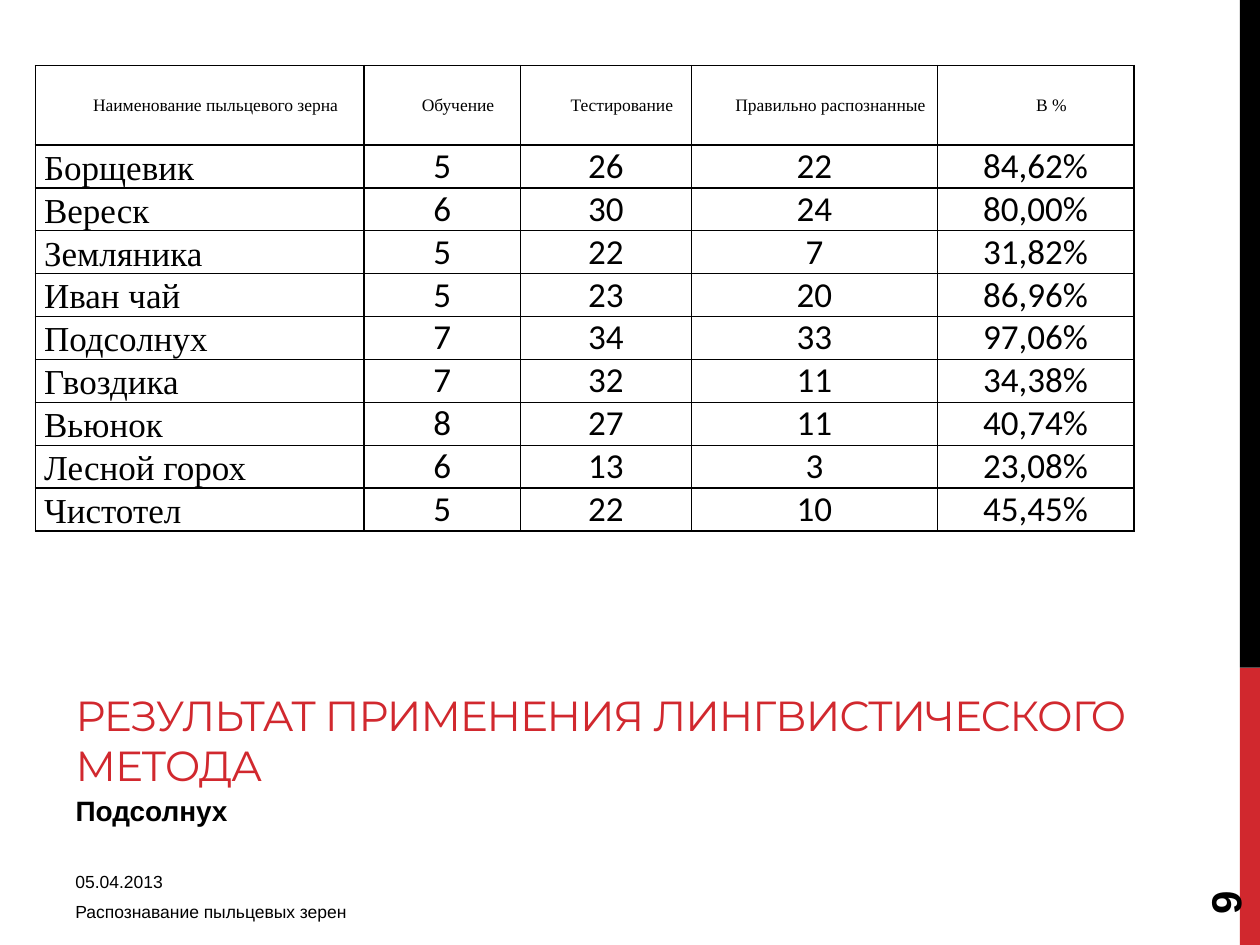
from dataclasses import dataclass
from pptx import Presentation
from pptx.dml.color import RGBColor as RGB
from pptx.enum.shapes import MSO_SHAPE as SHAPE
from pptx.enum.text import MSO_ANCHOR as ANCHOR, MSO_AUTO_SIZE as AUTO, PP_ALIGN as ALIGN
from pptx.oxml import parse_xml
from pptx.oxml.ns import nsdecls
from pptx.util import Inches, Pt


@dataclass
class Theme:
    red: RGB = RGB(0xD1, 0x28, 0x2E)
    black: RGB = RGB(0, 0, 0)
    small: int = 10
    body: int = 16
    cell: int = 20
    head: int = 24
    sans: str = "Arial"
    serif: str = "Times New Roman"
    digit: str = "Calibri"
    title: str = "Montserrat"


theme = Theme()


def write(frame, text, name, size, color=theme.black, bold=False):
    """Put one formatted line in a text frame and return its paragraph."""
    para = frame.paragraphs[0]
    run = para.add_run()
    run.text = text
    form = {"name": name, "size": Pt(size), "bold": bold}
    for key, value in form.items():
        setattr(run.font, key, value)
    run.font.color.rgb = color
    return para


def place(shape, left, top, width, height):
    """Move and size a shape, in inches."""
    spot = {"left": left, "top": top, "width": width, "height": height}
    for key, value in spot.items():
        setattr(shape, key, Inches(value))


deck = Presentation()
deck.slide_width, deck.slide_height = Inches(10), Inches(7.5)
slide = deck.slides.add_slide(deck.slide_layouts[1])
shapes = slide.shapes

# Side bars
for top, height, color in [(5.3, 2.2, theme.red), (0, 5.3, theme.black)]:
    bar = shapes.add_shape(SHAPE.RECTANGLE, Inches(9.84), Inches(top),
                           Inches(0.16), Inches(height))
    bar.shadow.inherit = False
    bar.fill.solid()
    bar.fill.fore_color.rgb = color
    bar.line.fill.background()

# Results table
rows = [
    ("Наименование пыльцевого зерна", "Обучение", "Тестирование",
     "Правильно распознанные", "В %"),
    ("Борщевик", "5", "26", "22", "84,62%"),
    ("Вереск", "6", "30", "24", "80,00%"),
    ("Земляника", "5", "22", "7", "31,82%"),
    ("Иван чай", "5", "23", "20", "86,96%"),
    ("Подсолнух", "7", "34", "33", "97,06%"),
    ("Гвоздика", "7", "32", "11", "34,38%"),
    ("Вьюнок", "8", "27", "11", "40,74%"),
    ("Лесной горох", "6", "13", "3", "23,08%"),
    ("Чистотел", "5", "22", "10", "45,45%"),
]
widths = [2.61, 1.24, 1.36, 1.95, 1.56]
heights = [0.63] + [0.34] * (len(rows) - 1)
table = shapes.add_table(len(rows), len(widths), Inches(0.28), Inches(0.52),
                         Inches(sum(widths)), Inches(sum(heights))).table
table.first_row = table.horz_banding = False
for col, width in zip(table.columns, widths):
    col.width = Inches(width)
for row, height in zip(table.rows, heights):
    row.height = Inches(height)

margins = {"margin_left": 0.07, "margin_right": 0.07, "margin_top": 0, "margin_bottom": 0}
for r, row in enumerate(rows):
    for c, text in enumerate(row):
        cell = table.cell(r, c)
        for key, value in margins.items():
            setattr(cell, key, Inches(value))
        cell.vertical_anchor = ANCHOR.BOTTOM if r else ANCHOR.MIDDLE
        name = theme.digit if r and c else theme.serif
        para = write(cell.text_frame, text, name, theme.cell if r else theme.small)
        para.alignment = ALIGN.LEFT if r and not c else ALIGN.CENTER
        if r == 0:
            props = para._p.get_or_add_pPr()
            props.set("marL", "0")
            props.set("indent", str(Inches(0.25)))
        # Borders come before the fill
        for side in "LRTB":
            cell._tc.get_or_add_tcPr().append(parse_xml(
                f'<a:ln{side} {nsdecls("a")} w="{Pt(1)}"><a:solidFill>'
                f'<a:srgbClr val="{theme.black}"/></a:solidFill></a:ln{side}>'))
        cell.fill.background()

# Subtitle
body = slide.placeholders[1]
place(body, 0.5, 6.25, 8.92, 0.5)
body.text_frame.auto_size = AUTO.NONE
body.text_frame.vertical_anchor = ANCHOR.TOP
para = write(body.text_frame, "Подсолнух", theme.sans, theme.body, bold=True)
para.space_after = Pt(6)
props = para._p.get_or_add_pPr()
props.set("marL", "0")
props.set("indent", "0")
props.append(parse_xml(f'<a:buNone {nsdecls("a")}/>'))

# Date, footer and slide number
notes = [
    ("05.04.2013", (0.5, 6.75, 3.75, 0.33), theme.small, False, ANCHOR.BOTTOM, 0, 0),
    ("Распознавание пыльцевых зерен", (0.5, 7.1, 3.75, 0.31), theme.small, False,
     ANCHOR.TOP, 0.05, 0),
    ("9", (9, 6.44, 1.44, 0.4), theme.head, True, ANCHOR.MIDDLE, 0.05, 270),
]
for text, spot, size, bold, anchor, base, turn in notes:
    box = shapes.add_textbox(0, 0, 0, 0)
    place(box, *spot)
    box.rotation = turn
    frame = box.text_frame
    frame.word_wrap = True
    frame.vertical_anchor = anchor
    frame.margin_bottom = Inches(base)
    write(frame, text, theme.sans, size, bold=bold)

# Title
title = shapes.title
place(title, 0.5, 5.42, 8.92, 1.4)
title.text_frame.auto_size = AUTO.NONE
title.text_frame.vertical_anchor = ANCHOR.TOP
para = write(title.text_frame, "РЕЗУЛЬТАТ ПРИМЕНЕНИЯ ЛИНГВИСТИЧЕСКОГО МЕТОДА",
             theme.title, theme.head, theme.red)
para.alignment = ALIGN.LEFT
para.runs[0]._r.get_or_add_rPr().set("spc", "-60")

deck.save("out.pptx")
